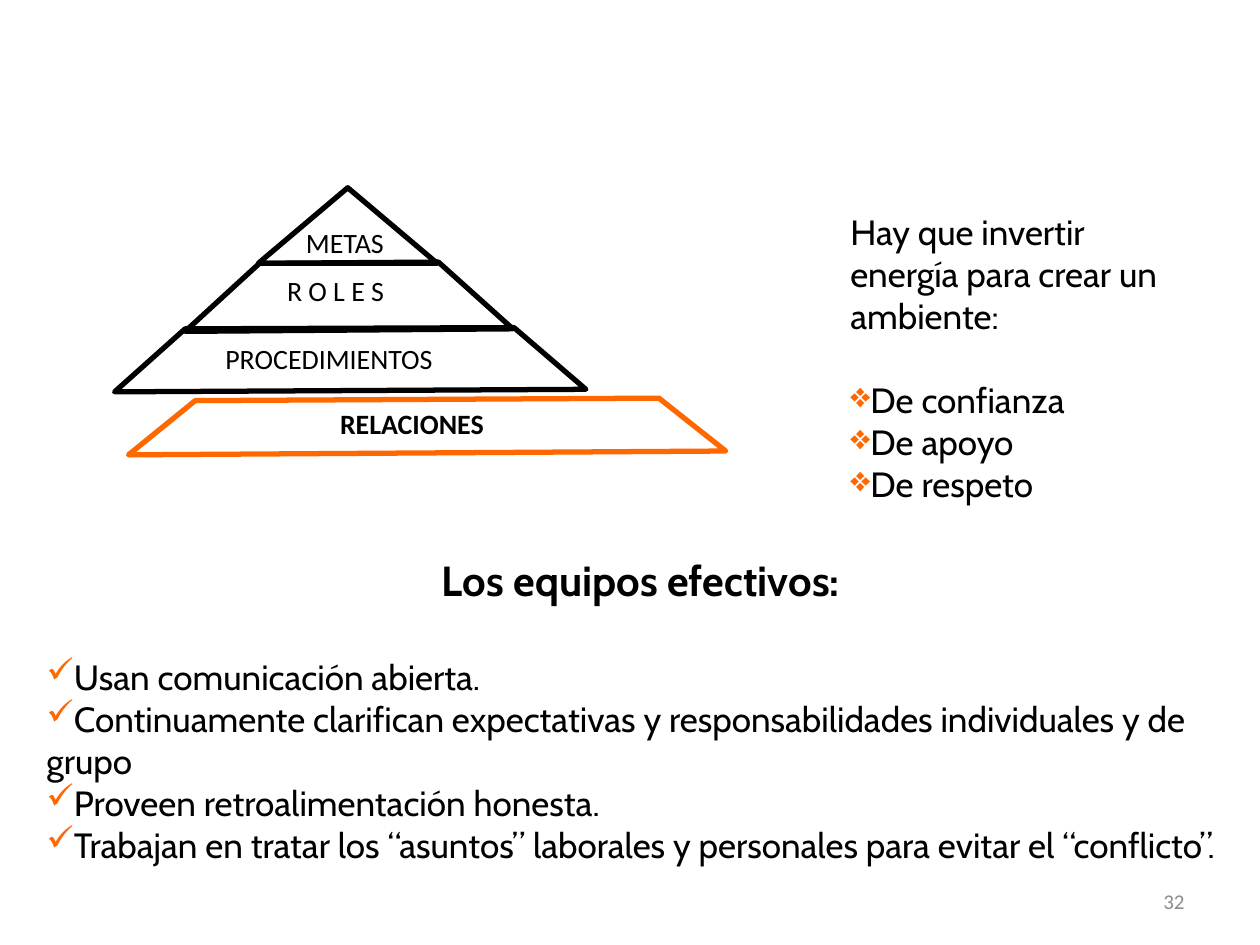
from dataclasses import dataclass

from lxml.etree import SubElement
from pptx import Presentation
from pptx.dml.color import RGBColor
from pptx.enum.shapes import MSO_SHAPE
from pptx.enum.text import MSO_ANCHOR, PP_ALIGN
from pptx.oxml.ns import qn
from pptx.util import Inches, Pt

BLACK = RGBColor(0x00, 0x00, 0x00)
ORANGE = RGBColor(0xFF, 0x68, 0x01)
GREY = RGBColor(0x8C, 0x8C, 0x8C)


@dataclass
class Tier:
    """A pyramid level; corners run bottom right, top right, top left, bottom left."""
    corners: list[tuple[float, float]]
    color: RGBColor = BLACK


@dataclass
class Line:
    text: str
    size: float
    font: str = "Cabin"
    color: RGBColor = BLACK
    bold: bool = False
    bullet: str = ""
    align: PP_ALIGN = PP_ALIGN.LEFT
    space_before: float = 0


@dataclass
class TextArea:
    box: tuple[float, float, float, float]
    lines: list[Line]
    wrap: bool = True
    anchor: MSO_ANCHOR = MSO_ANCHOR.TOP


def outline(shape, color: RGBColor) -> None:
    shape.shadow.inherit = False
    shape.fill.background()
    shape.line.color.rgb = color
    shape.line.width = Pt(3)


def draw_tier(slide, tier: Tier) -> None:
    start, *rest = [(Inches(x), Inches(y)) for x, y in tier.corners]
    builder = slide.shapes.build_freeform(*start)
    builder.add_line_segments(rest, close=True)
    outline(builder.convert_to_shape(), tier.color)


def add_bullet(paragraph, char: str) -> None:
    properties = paragraph._p.get_or_add_pPr()
    properties.set("marL", "0")
    properties.set("indent", "0")
    color = SubElement(properties, qn("a:buClr"))
    SubElement(color, qn("a:srgbClr"), val=str(ORANGE))
    SubElement(properties, qn("a:buChar"), char=char)


def draw_text(slide, area: TextArea) -> None:
    frame = slide.shapes.add_textbox(*map(Inches, area.box)).text_frame
    frame.word_wrap = area.wrap
    frame.vertical_anchor = area.anchor
    for index, line in enumerate(area.lines):
        paragraph = frame.paragraphs[0] if index == 0 else frame.add_paragraph()
        paragraph.alignment = line.align
        paragraph.space_before = Pt(line.space_before)
        if line.bullet:
            add_bullet(paragraph, line.bullet)
        run = paragraph.add_run()
        run.text = line.text
        font_format = {"name": line.font, "size": Pt(line.size), "bold": line.bold}
        for attribute, value in font_format.items():
            setattr(run.font, attribute, value)
        run.font.color.rgb = line.color


def bulleted(texts: list[str], bullet: str, gap: float) -> list[Line]:
    """Bulleted lines, the first set off from the text above by gap points."""
    return [Line(text, 20, bullet=bullet, space_before=0 if index else gap)
            for index, text in enumerate(texts)]


def tier_label(text: str, left: float, top: float, width: float, bold: bool = False) -> TextArea:
    return TextArea((left, top, width, 0.37), [Line(text, 16, "Calibri", bold=bold)], wrap=False)


TIERS = [
    Tier([(4.07, 2.61), (3.48, 2.08), (2.06, 2.09), (1.47, 2.63)]),
    Tier([(4.65, 3.09), (4.08, 2.6), (1.47, 2.61), (0.91, 3.11)]),
    Tier([(5.76, 3.58), (5.23, 3.16), (1.55, 3.18), (1.02, 3.61)], ORANGE),
]

TEXT_AREAS = [
    tier_label("METAS", 2.33, 1.74, 0.97),
    tier_label("R O L E S", 2.18, 2.12, 1.2),
    tier_label("PROCEDIMIENTOS", 1.69, 2.66, 2.22),
    tier_label("RELACIONES", 2.6, 3.18, 1.65, bold=True),
    TextArea((6.65, 1.62, 2.91, 2.46), [
        Line("Hay que invertir energía para crear un ambiente:", 20),
        *bulleted(["De confianza", "De apoyo", "De respeto"], "❖", 24),
    ]),
    TextArea((0.27, 4.35, 9.63, 3.6), [
        Line("Los equipos efectivos:", 24, bold=True, align=PP_ALIGN.CENTER),
        *bulleted([
            "Usan comunicación abierta.",
            "Continuamente clarifican expectativas y responsabilidades individuales y de grupo",
            "Proveen retroalimentación honesta.",
            "Trabajan en tratar los “asuntos” laborales y personales para evitar el “conflicto”.",
        ], "✓", 29),
    ]),
    TextArea((7.17, 6.95, 2.33, 0.4),
             [Line("32", 12, "Calibri", GREY, align=PP_ALIGN.RIGHT)],
             anchor=MSO_ANCHOR.MIDDLE),
]


def main() -> None:
    presentation = Presentation()
    presentation.slide_width = Inches(10)
    presentation.slide_height = Inches(7.5)
    slide = presentation.slides.add_slide(presentation.slide_layouts[6])

    for tier in TIERS:
        draw_tier(slide, tier)
    peak = slide.shapes.add_shape(MSO_SHAPE.ISOSCELES_TRIANGLE,
                                  Inches(2.05), Inches(1.49), Inches(1.42), Inches(0.6))
    outline(peak, BLACK)
    for area in TEXT_AREAS:
        draw_text(slide, area)

    presentation.save("out.pptx")


if __name__ == "__main__":
    main()
